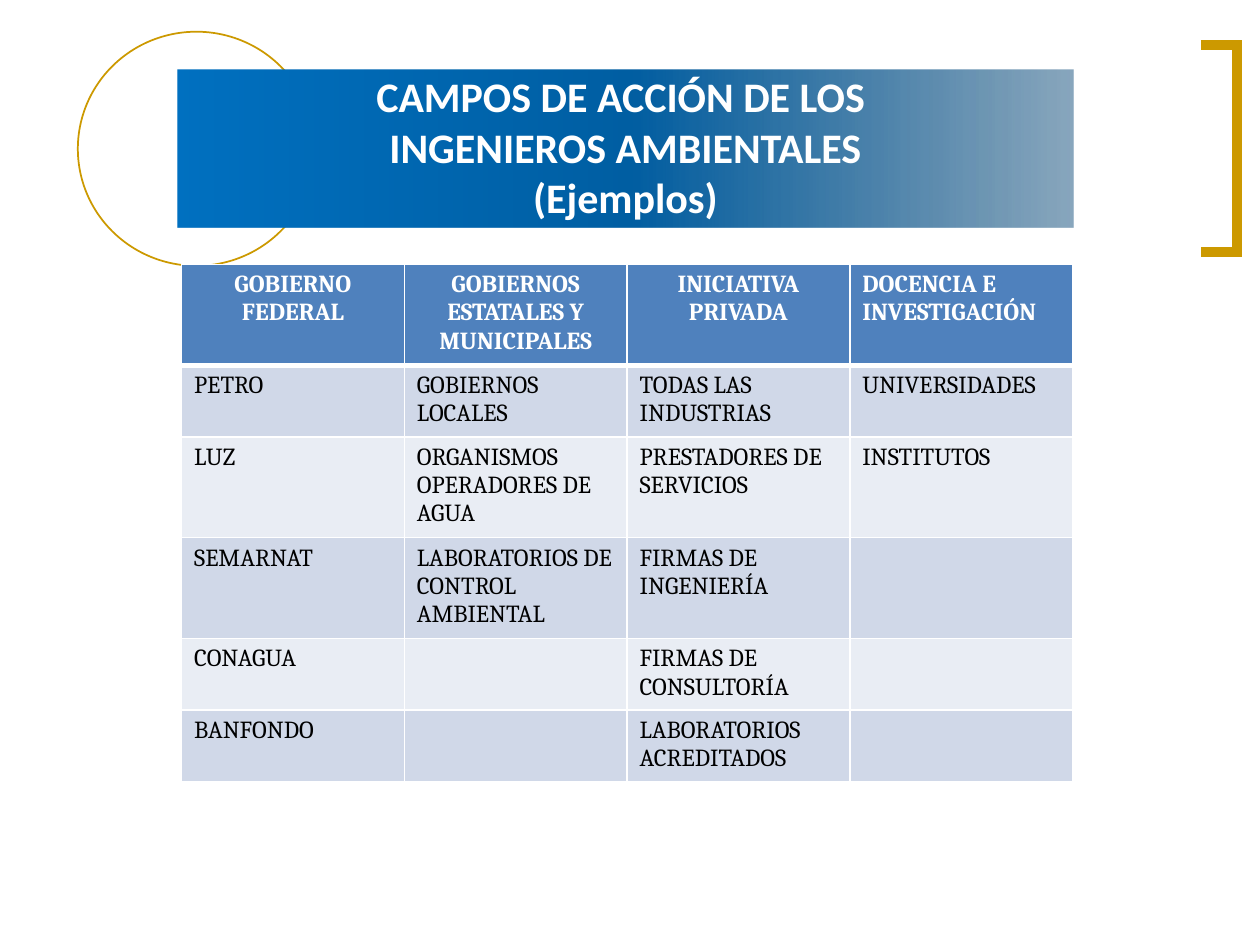
"""Build the slide on fields of work for environmental engineers."""
from lxml import etree
from pptx import Presentation
from pptx.dml.color import RGBColor
from pptx.enum.shapes import MSO_SHAPE
from pptx.enum.text import MSO_ANCHOR, PP_ALIGN
from pptx.oxml import parse_xml
from pptx.oxml.ns import nsdecls, qn
from pptx.util import Cm, Pt

OVAL, RECTANGLE = MSO_SHAPE.OVAL, MSO_SHAPE.RECTANGLE
MIDDLE = MSO_ANCHOR.MIDDLE
LEFT, CENTER = PP_ALIGN.LEFT, PP_ALIGN.CENTER

GOLD = RGBColor(0xCC, 0x99, 0x00)
WHITE = RGBColor(0xFF, 0xFF, 0xFF)
BLACK = RGBColor(0x00, 0x00, 0x00)
HEADER = RGBColor(0x4F, 0x81, 0xBD)
BANDS = [RGBColor(0xE9, 0xED, 0xF4), RGBColor(0xD0, 0xD8, 0xE8)]
NAVY = RGBColor(0x00, 0x42, 0x72)
MID_BLUE = RGBColor(0x00, 0x5E, 0xA2)
BLUE = RGBColor(0x00, 0x70, 0xC0)

TITLE = ["CAMPOS DE ACCIÓN DE LOS ", "INGENIEROS AMBIENTALES", "(Ejemplos)"]
ROWS = [
    ["GOBIERNO FEDERAL", "GOBIERNOS ESTATALES Y MUNICIPALES",
     "INICIATIVA PRIVADA", "DOCENCIA E INVESTIGACIÓN"],
    ["PETRO", "GOBIERNOS LOCALES", "TODAS LAS INDUSTRIAS", "UNIVERSIDADES"],
    ["LUZ", "ORGANISMOS OPERADORES DE AGUA", "PRESTADORES DE SERVICIOS", "INSTITUTOS"],
    ["SEMARNAT", "LABORATORIOS DE CONTROL AMBIENTAL", "FIRMAS DE INGENIERÍA", ""],
    ["CONAGUA", "", "FIRMAS DE CONSULTORÍA", ""],
    ["BANFONDO", "", "LABORATORIOS ACREDITADOS", ""],
]
HEIGHTS = [1.93, 1.4, 1.96, 1.96, 1.4, 1.4]


def add_run(p, text, font, size, color, bold, align):
    p.alignment = align
    r = p.add_run()
    r.text = text
    r.font.name = font
    r.font.size = Pt(size)
    r.font.bold = bold
    r.font.color.rgb = color


def add_border(cell, side, width):
    cell._tc.get_or_add_tcPr().append(parse_xml(
        f'<a:{side} {nsdecls("a")} w="{Pt(width)}"><a:solidFill>'
        f'<a:srgbClr val="{WHITE}"/></a:solidFill></a:{side}>'))


prs = Presentation()
prs.slide_width, prs.slide_height = Cm(25.4), Cm(19.05)
s = prs.slides.add_slide(prs.slide_layouts[6])

sp = s.shapes.add_shape(OVAL, Cm(1.57), Cm(0.64), Cm(4.78), Cm(4.72))
sp.shadow.inherit = False
sp.fill.background()
sp.line.color.rgb = GOLD
sp.line.width = Pt(1)

sp = s.shapes.add_shape(RECTANGLE, Cm(3.58), Cm(1.4), Cm(18.06), Cm(3.18))
sp.shadow.inherit = False
sp.line.fill.background()
sp.fill.gradient()
sp.fill.gradient_angle = 180
stops = sp._element.spPr.find(qn("a:gradFill")).find(qn("a:gsLst"))
for stop in list(stops):
    stops.remove(stop)
for pos, color, alpha in [(0, NAVY, 46), (50, MID_BLUE, 100), (100, BLUE, 100)]:
    gs = etree.SubElement(stops, qn("a:gs"), pos=str(pos * 1000))
    clr = etree.SubElement(gs, qn("a:srgbClr"), val=str(color))
    etree.SubElement(clr, qn("a:alpha"), val=str(alpha * 1000))

left, right, top, bottom = Cm(24.21), Cm(24.94), Cm(0.91), Cm(5.08)
builder = s.shapes.build_freeform(left, top)
builder.add_line_segments([(right, top), (right, bottom), (left, bottom)], close=False)
sp = builder.convert_to_shape()
sp.shadow.inherit = False
sp.fill.background()
sp.line.color.rgb = GOLD
sp.line.width = Pt(6)
etree.SubElement(sp.line._ln, qn("a:miter"), lim="800000")

tf = s.shapes.add_textbox(Cm(3.58), Cm(1.57), Cm(18.06), Cm(2.77)).text_frame
tf.word_wrap = True
tf.vertical_anchor = MIDDLE
for i, text in enumerate(TITLE):
    p = tf.add_paragraph() if i else tf.paragraphs[0]
    add_run(p, text, "Calibri", 24, WHITE, True, CENTER)

table = s.shapes.add_table(len(ROWS), len(ROWS[0]), Cm(3.66), Cm(5.33),
                           Cm(17.96), Cm(sum(HEIGHTS))).table
for col in table.columns:
    col.width = Cm(4.49)
for i, (row, height) in enumerate(zip(ROWS, HEIGHTS)):
    table.rows[i].height = Cm(height)
    for j, text in enumerate(row):
        cell = table.cell(i, j)
        for side in ("lnL", "lnR", "lnT", "lnB"):
            thick = (i, side) in [(0, "lnB"), (1, "lnT")]
            add_border(cell, side, 3 if thick else 1)
        cell.fill.solid()
        cell.fill.fore_color.rgb = BANDS[i % 2] if i else HEADER
        if text:
            align = CENTER if i == 0 and j < 3 else LEFT
            add_run(cell.text_frame.paragraphs[0], text, "Cambria", 14,
                    BLACK if i else WHITE, i == 0, align)

prs.save("out.pptx")
